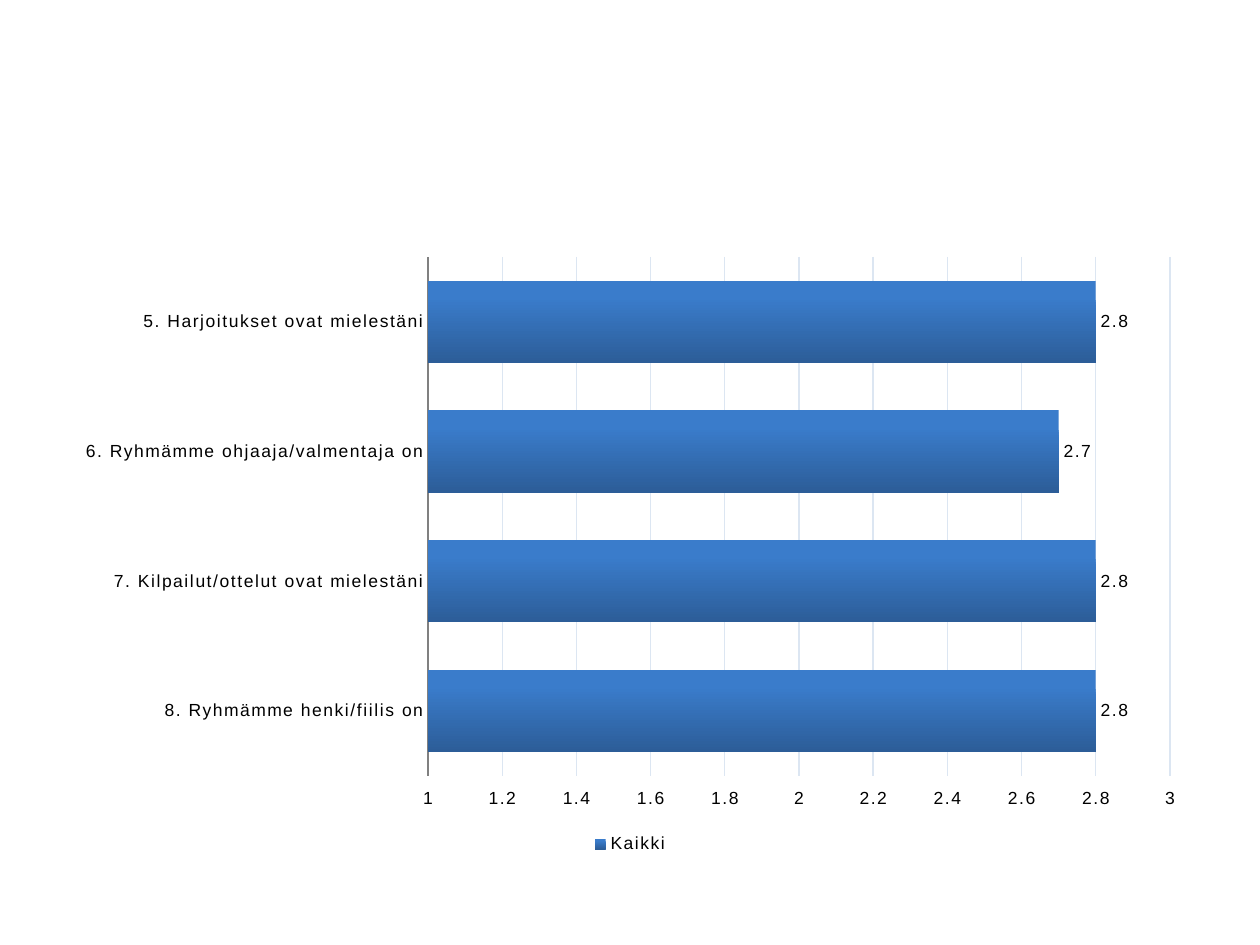
"""Build a slide with a bar chart of mean survey answers."""
import pptx
import pptx.chart.data
import pptx.dml.color
import pptx.enum.chart
import pptx.oxml
import pptx.oxml.ns
import pptx.util
from dataclasses import dataclass

SERIES_NAME = "Kaikki"
ANSWERS = [
    ("5. Harjoitukset ovat mielestäni", 2.8),
    ("6. Ryhmämme ohjaaja/valmentaja on", 2.7),
    ("7. Kilpailut/ottelut ovat mielestäni", 2.8),
    ("8. Ryhmämme henki/fiilis on", 2.8),
]
PIXEL = 914400 // 126
SLIDE_SIZE = (1260, 945)
CHART_BOX = (63, 244, 1134, 615)
PLOT_BOX = (428, 257, 742, 519)


@dataclass(frozen=True)
class Theme:
    font: str = "Arial"
    size: int = 10
    spacing: int = 100
    text: str = "000000"
    bar_top: str = "3A7CCB"
    bar_bottom: str = "2C5D98"
    grid: str = "DCE6F2"
    axis: str = "808080"


THEME = Theme()


def color(value):
    return pptx.dml.color.RGBColor.from_string(value)


def apply(target, values):
    for name, value in values.items():
        setattr(target, name, value)


def style_font(font):
    apply(font, {"name": THEME.font, "size": pptx.util.Pt(THEME.size)})
    font.color.rgb = color(THEME.text)


def style_line(line, value):
    line.width = pptx.util.Pt(0.75)
    line.color.rgb = color(value)


def style_axes(chart):
    none = pptx.enum.chart.XL_TICK_MARK.NONE
    categories, values = chart.category_axis, chart.value_axis
    for axis in (categories, values):
        apply(axis, {"major_tick_mark": none, "minor_tick_mark": none})
        style_font(axis.tick_labels.font)
    apply(categories, {"reverse_order": True, "has_major_gridlines": False})
    style_line(categories.format.line, THEME.axis)
    apply(values, {
        "minimum_scale": 1, "maximum_scale": 3, "major_unit": 0.2,
        "has_major_gridlines": True,
        "tick_label_position": pptx.enum.chart.XL_TICK_LABEL_POSITION.HIGH,
    })
    apply(values.tick_labels, {"number_format": "General", "number_format_is_linked": False})
    values.format.line.fill.background()
    style_line(values.major_gridlines.format.line, THEME.grid)


def style_bars(plot):
    apply(plot, {"gap_width": 58, "vary_by_categories": False, "has_data_labels": True})
    fill = plot.series[0].format.fill
    fill.gradient()
    fill.gradient_angle = 270
    stops = [(0.2, THEME.bar_top), (1, THEME.bar_bottom)]
    for stop, (position, value) in zip(fill.gradient_stops, stops):
        stop.position = position
        stop.color.rgb = color(value)
    apply(plot.data_labels, {
        "show_value": True,
        "number_format": "General",
        "number_format_is_linked": False,
        "position": pptx.enum.chart.XL_LABEL_POSITION.OUTSIDE_END,
    })
    style_font(plot.data_labels.font)


def place_plot(chart):
    left, top, width, height = CHART_BOX
    x, y, w, h = PLOT_BOX
    fractions = {
        "x": (x - left) / width, "y": (y - top) / height,
        "w": w / width, "h": h / height,
    }
    modes = '<c:layoutTarget val="inner"/><c:xMode val="edge"/><c:yMode val="edge"/>'
    numbers = "".join(f'<c:{name} val="{value:.4f}"/>' for name, value in fractions.items())
    layout = pptx.oxml.parse_xml(
        f'<c:layout {pptx.oxml.ns.nsdecls("c")}>'
        f"<c:manualLayout>{modes}{numbers}</c:manualLayout></c:layout>"
    )
    area = chart.element.find(".//" + pptx.oxml.ns.qn("c:plotArea"))
    for previous in area.findall(pptx.oxml.ns.qn("c:layout")):
        area.remove(previous)
    area.insert(0, layout)


def add_answer_chart(slide):
    data = pptx.chart.data.CategoryChartData()
    data.categories = [question for question, mean in ANSWERS]
    data.add_series(SERIES_NAME, [mean for question, mean in ANSWERS])
    chart = slide.shapes.add_chart(
        pptx.enum.chart.XL_CHART_TYPE.BAR_CLUSTERED,
        *(length * PIXEL for length in CHART_BOX), data
    ).chart
    apply(chart, {"has_title": False, "has_legend": True})
    style_font(chart.font)
    apply(chart.legend, {
        "position": pptx.enum.chart.XL_LEGEND_POSITION.BOTTOM,
        "include_in_layout": False,
    })
    style_font(chart.legend.font)
    style_axes(chart)
    style_bars(chart.plots[0])
    place_plot(chart)
    for properties in chart.element.iter(pptx.oxml.ns.qn("a:defRPr")):
        properties.set("spc", str(THEME.spacing))


def main():
    presentation = pptx.Presentation()
    width, height = (length * PIXEL for length in SLIDE_SIZE)
    apply(presentation, {"slide_width": width, "slide_height": height})
    slide = presentation.slides.add_slide(presentation.slide_layouts[6])
    add_answer_chart(slide)
    presentation.save("out.pptx")


if __name__ == "__main__":
    main()
